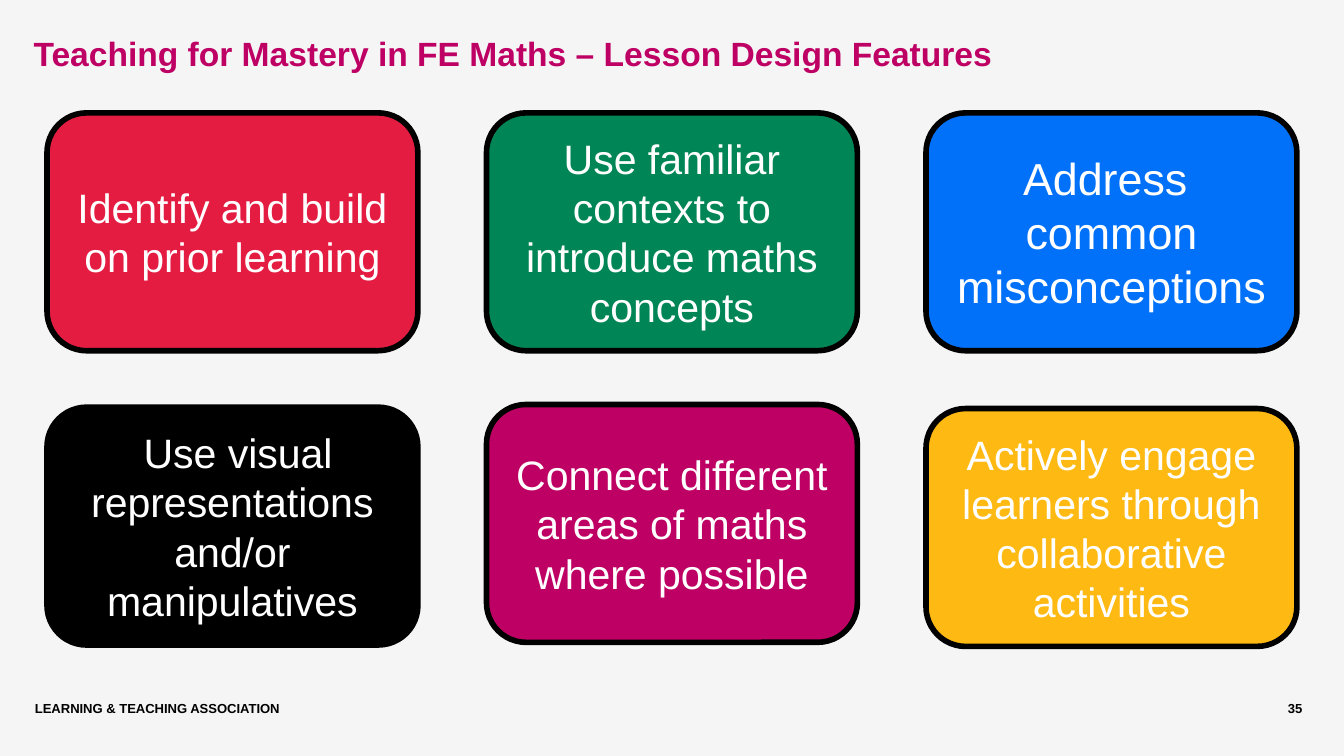
from dataclasses import dataclass

import pptx
import pptx.dml.color
import pptx.enum.shapes
import pptx.enum.text
import pptx.util

Inches = pptx.util.Inches
Align = pptx.enum.text.PP_ALIGN
Anchor = pptx.enum.text.MSO_ANCHOR


@dataclass(frozen=True)
class Theme:
    font: str = "Arial"
    background: str = "F5F5F5"
    black: str = "000000"
    white: str = "FFFFFF"
    red: str = "E51C41"
    green: str = "008556"
    blue: str = "0071F8"
    magenta: str = "BE0064"
    amber: str = "FEB912"
    title_size: int = 18
    title_leading: int = 20
    footer_size: int = 7
    card_size: int = 22
    large_card_size: int = 24
    outline: int = 3


@dataclass(frozen=True)
class Grid:
    left: float = 0.35
    top: float = 0.84
    width: float = 2.76
    height: float = 1.77
    column_step: float = 3.27
    row_step: float = 2.19

    def box(self, column: int, row: int, nudge: float) -> tuple:
        left = self.left + column * self.column_step
        top = self.top + row * self.row_step + nudge
        return left, top, self.width, self.height


@dataclass(frozen=True)
class Card:
    text: str
    column: int
    row: int
    fill: str
    size: int
    nudge: float = 0


THEME = Theme()
GRID = Grid()

CARDS = [
    Card("Identify and build on prior learning", 0, 0, THEME.red, THEME.card_size),
    Card("Use familiar contexts to introduce maths concepts", 1, 0, THEME.green, THEME.card_size),
    Card("Address  common misconceptions", 2, 0, THEME.blue, THEME.large_card_size),
    Card(" Use visual representations and/or manipulatives", 0, 1, THEME.black, THEME.card_size),
    Card("Connect different areas of maths where possible", 1, 1, THEME.magenta, THEME.card_size, -0.02),
    Card("Actively engage learners through collaborative activities", 2, 1, THEME.amber, THEME.card_size, 0.01),
]


def color(code: str) -> pptx.dml.color.RGBColor:
    return pptx.dml.color.RGBColor.from_string(code)


def write_text(shape, text: str, *, size: int, fill: str, bold: bool = False,
               align=Align.LEFT, anchor=Anchor.TOP, leading=None) -> None:
    frame = shape.text_frame
    frame.word_wrap = True
    frame.vertical_anchor = anchor
    paragraph = frame.paragraphs[0]
    paragraph.alignment = align
    paragraph.line_spacing = leading
    run = paragraph.add_run()
    run.text = text
    run.font.name = THEME.font
    run.font.size = pptx.util.Pt(size)
    run.font.bold = bold
    run.font.color.rgb = color(fill)


def add_label(slide, box: tuple, text: str, **text_format) -> None:
    label = slide.shapes.add_textbox(*map(Inches, box))
    frame = label.text_frame
    frame.margin_left = frame.margin_right = 0
    frame.margin_top = frame.margin_bottom = 0
    write_text(label, text, bold=True, **text_format)


def add_card(slide, card: Card) -> None:
    box = GRID.box(card.column, card.row, card.nudge)
    shape = slide.shapes.add_shape(
        pptx.enum.shapes.MSO_SHAPE.ROUNDED_RECTANGLE, *map(Inches, box))
    shape.shadow.inherit = False
    shape.fill.solid()
    shape.fill.fore_color.rgb = color(card.fill)
    shape.line.color.rgb = color(THEME.black)
    shape.line.width = pptx.util.Pt(THEME.outline)
    write_text(shape, card.text, size=card.size, fill=THEME.white,
               align=Align.CENTER, anchor=Anchor.MIDDLE)


def main() -> None:
    presentation = pptx.Presentation()
    presentation.slide_width = Inches(10)
    presentation.slide_height = presentation.slide_width * 9 // 16
    slide = presentation.slides.add_slide(presentation.slide_layouts[6])
    slide.background.fill.solid()
    slide.background.fill.fore_color.rgb = color(THEME.background)

    add_label(slide, (0.25, 0.27, 9.23, 0.76),
              "Teaching for Mastery in FE Maths – Lesson Design Features",
              size=THEME.title_size, fill=THEME.magenta,
              leading=pptx.util.Pt(THEME.title_leading))
    add_label(slide, (0.26, 5.21, 8.41, 0.3), "LEARNING & TEACHING ASSOCIATION",
              size=THEME.footer_size, fill=THEME.black)
    add_label(slide, (8.7, 5.21, 0.99, 0.3), "35",
              size=THEME.footer_size, fill=THEME.black, align=Align.RIGHT)
    for card in CARDS:
        add_card(slide, card)

    presentation.save("out.pptx")


if __name__ == "__main__":
    main()
